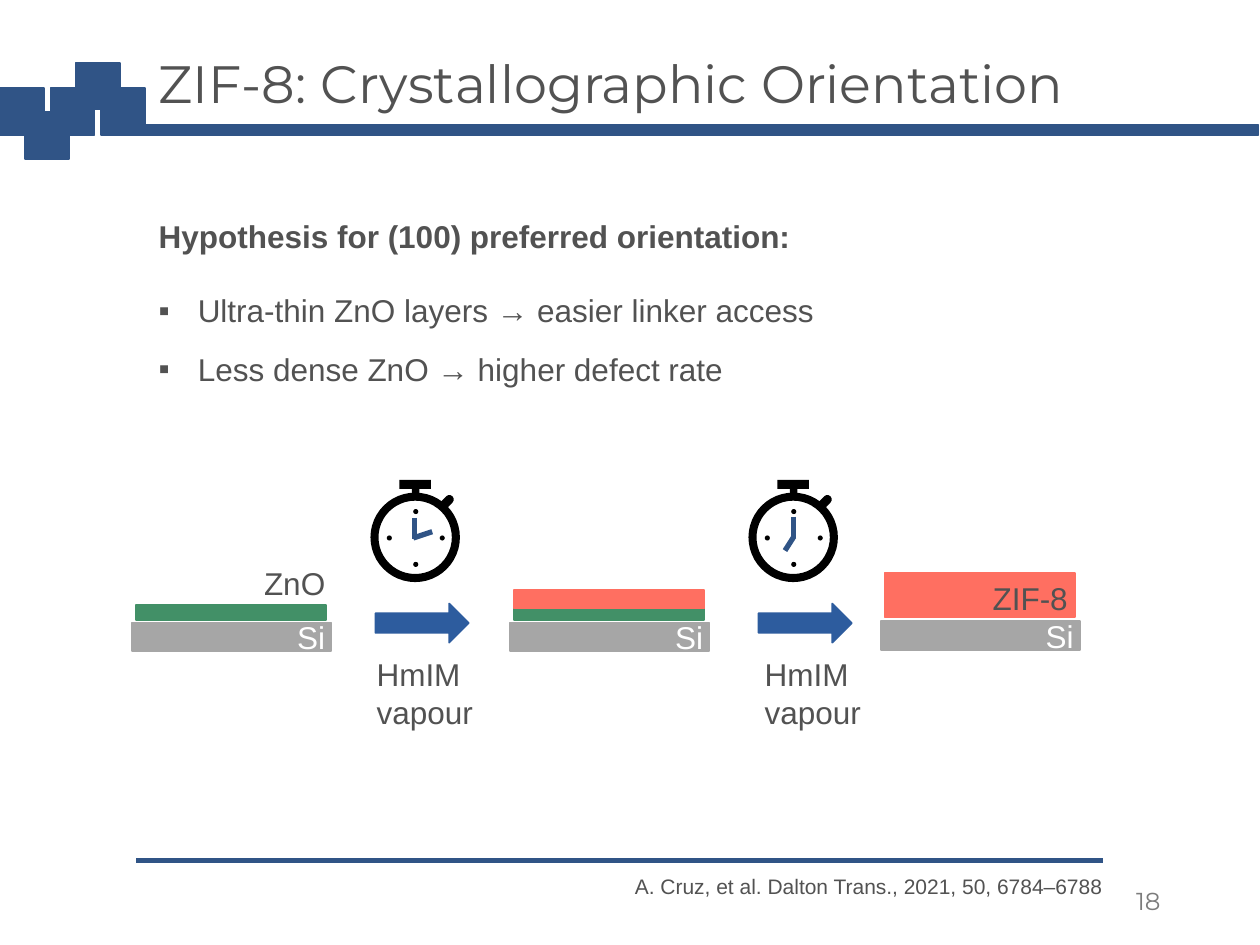
from lxml.etree import SubElement
from pptx import Presentation
from pptx.dml.color import RGBColor
from pptx.enum.shapes import MSO_CONNECTOR as Connector, MSO_SHAPE as Shape
from pptx.enum.text import MSO_ANCHOR as Anchor, MSO_AUTO_SIZE as AutoSize, PP_ALIGN as Align
from pptx.oxml.ns import qn
from pptx.util import Inches, Pt

NAVY = RGBColor(0x30, 0x54, 0x86)
ARROW_BLUE = RGBColor(0x2D, 0x5C, 0x9E)
SILICON_GREY = RGBColor(0xA6, 0xA6, 0xA6)
ZNO_GREEN = RGBColor(0x42, 0x90, 0x67)
ZIF_CORAL = RGBColor(0xFF, 0x6F, 0x61)
TEXT_GREY = RGBColor(0x52, 0x52, 0x52)
NUMBER_GREY = RGBColor(0x7C, 0x7C, 0x7C)
BLACK = RGBColor(0, 0, 0)
WHITE = RGBColor(0xFF, 0xFF, 0xFF)

TITLE_FONT = {"name": "Montserrat", "size": Pt(30), "color": TEXT_GREY}
NUMBER_FONT = {"name": "Montserrat", "size": Pt(14), "color": NUMBER_GREY}
BODY_FONT = {"name": "Arial", "size": Pt(18), "color": TEXT_GREY, "bold": False}
SILICON_FONT = {**BODY_FONT, "color": WHITE}
CITATION_FONT = {**BODY_FONT, "size": Pt(12)}
PLAIN = {"alignment": Align.LEFT, "space_before": Pt(0), "space_after": Pt(0), "line_spacing": 1.0}


def set_values(target, values):
    """Set every attribute of target named in values."""
    for name, value in values.items():
        if name == "color":
            target.color.rgb = value
        else:
            setattr(target, name, value)


def inches(*lengths):
    """Turn numbers into lengths in inches."""
    return [Inches(length) for length in lengths]


def place(shape, *box):
    """Move and size a shape to left, top, width and height."""
    set_values(shape, dict(zip(("left", "top", "width", "height"), inches(*box))))


def write(paragraph, text, font, **layout):
    """Write one formatted paragraph."""
    paragraph.text = text
    set_values(paragraph, {**PLAIN, **layout})
    set_values(paragraph.runs[0].font, font)


def add_label(slide, box, text, font, anchor=Anchor.TOP, **layout):
    """Add a wrapping text box."""
    frame = slide.shapes.add_textbox(*inches(*box)).text_frame
    set_values(frame, {"word_wrap": True, "vertical_anchor": anchor})
    write(frame.paragraphs[0], text, font, **layout)


def add_block(slide, kind, box, colour, outlined=True, rotation=0):
    """Add a flat shape in one colour."""
    shape = slide.shapes.add_shape(kind, *inches(*box))
    shape.shadow.inherit = False
    shape.rotation = rotation
    shape.fill.solid()
    shape.fill.fore_color.rgb = colour
    if outlined:
        set_values(shape.line, {"color": colour, "width": Pt(1)})
    else:
        shape.line.fill.background()
    return shape


def add_line(slide, start, end):
    """Add a thick navy line without shadow."""
    line = slide.shapes.add_connector(Connector.STRAIGHT, *inches(*start, *end))
    set_values(line.line, {"color": NAVY, "width": Pt(3)})
    SubElement(line._element.spPr, qn("a:effectLst"))


def add_frame(slide):
    """Add the header squares, header bar and footer rule."""
    add_line(slide, (1.08, 6.83), (8.75, 6.83))
    add_block(slide, Shape.RECTANGLE, (1.13, 0.99, 8.86, 0.08), NAVY)
    for column, top in enumerate((0.7, 0.89, 0.7, 0.5, 0.7)):
        add_block(slide, Shape.RECTANGLE, (0.2 * column, top, 0.35, 0.37), NAVY)


def fill_title(slide, text):
    """Place and format the title."""
    title = slide.shapes.title
    place(title, 1.16, 0.35, 8.62, 0.68)
    set_values(title.text_frame, {"vertical_anchor": Anchor.MIDDLE, "auto_size": AutoSize.NONE})
    write(title.text_frame.paragraphs[0], text, TITLE_FONT, line_spacing=0.9)


def set_bullet(paragraph, character):
    """Give a paragraph a hanging bullet, or none."""
    properties = paragraph._p.get_or_add_pPr()
    indent = Inches(0.31) if character else 0
    properties.set("marL", str(indent))
    properties.set("indent", str(-indent))
    if character:
        SubElement(properties, qn("a:buFont"), typeface="Arial")
        SubElement(properties, qn("a:buChar"), char=character)
    else:
        SubElement(properties, qn("a:buNone"))


def fill_body(slide, heading, points):
    """Write the heading and bullet points in the body placeholder."""
    body = slide.placeholders[1]
    place(body, 1.16, 1.67, 7, 1.48)
    frame = body.text_frame
    set_values(frame, {"auto_size": AutoSize.NONE, "vertical_anchor": Anchor.TOP})
    set_bullet(frame.paragraphs[0], None)
    write(frame.paragraphs[0], heading, {**BODY_FONT, "bold": True})
    for text, gap in points:
        paragraph = frame.add_paragraph()
        set_bullet(paragraph, "▪")
        write(paragraph, text, BODY_FONT, space_before=Pt(gap))


def add_sample(slide, left, top, films):
    """Add a silicon substrate carrying films of given top, height and colour."""
    add_block(slide, Shape.RECTANGLE, (left, top, 1.58, 0.23), SILICON_GREY)
    for film_top, height, colour in films:
        add_block(slide, Shape.RECTANGLE, (left + 0.03, film_top, 1.51, height), colour)
    add_label(slide, (left + 1.21, top - 0.08, 0.75, 0.4), "Si", SILICON_FONT)


def add_stopwatch(slide, x, y, hands):
    """Add a stopwatch centred on x, y with hands given as offsets."""
    add_block(slide, Shape.RECTANGLE, (x - 0.13, y - 0.46, 0.25, 0.07), BLACK, False)
    add_block(slide, Shape.RECTANGLE, (x - 0.03, y - 0.4, 0.06, 0.08), BLACK, False)
    knob = add_block(slide, Shape.ROUNDED_RECTANGLE, (x + 0.18, y - 0.32, 0.13, 0.07), BLACK, False, -45)
    knob.adjustments[0] = 0.5
    ring = add_block(slide, Shape.DONUT, (x - 0.36, y - 0.36, 0.71, 0.71), BLACK, False)
    ring.adjustments[0] = 0.09
    for across, down in ((0, -1), (0, 1), (1, 0), (-1, 0)):
        dot = (x + 0.21 * across - 0.02, y + 0.21 * down - 0.02, 0.04, 0.04)
        add_block(slide, Shape.OVAL, dot, BLACK, False)
    for start, end in hands:
        add_line(slide, (x + start[0], y + start[1]), (x + end[0], y + end[1]))


def add_exposure(slide, arrow_left, label_left):
    """Add a process arrow and the vapour below it."""
    add_block(slide, Shape.RIGHT_ARROW, (arrow_left, 4.79, 0.74, 0.31), ARROW_BLUE)
    add_label(slide, (label_left, 5.15, 1.09, 0.71), "HmIM vapour", BODY_FONT)


def main():
    """Build and save the slide."""
    presentation = Presentation()
    set_values(presentation, {"slide_width": Inches(10), "slide_height": Inches(7.5)})
    slide = presentation.slides.add_slide(presentation.slide_layouts[1])
    add_frame(slide)
    fill_title(slide, "ZIF-8: Crystallographic Orientation")
    fill_body(slide, "Hypothesis for (100) preferred orientation:", [
        ("Ultra-thin ZnO layers → easier linker access", 21),
        ("Less dense ZnO → higher defect rate", 12),
    ])

    add_sample(slide, 1.05, 4.94, [(4.8, 0.12, ZNO_GREEN)])
    add_sample(slide, 4.05, 4.94, [(4.83, 0.09, ZNO_GREEN), (4.68, 0.15, ZIF_CORAL)])
    add_sample(slide, 6.99, 4.93, [(4.55, 0.35, ZIF_CORAL)])
    add_label(slide, (1.46, 4.43, 1.22, 0.4), "ZnO", BODY_FONT, alignment=Align.RIGHT)
    add_label(slide, (7.78, 4.55, 0.87, 0.4), "ZIF-8", BODY_FONT)

    add_exposure(slide, 2.98, 2.89)
    add_exposure(slide, 6.02, 5.97)
    add_stopwatch(slide, 3.3, 4.27, [((-0.01, -0.16), (-0.01, 0.01)), ((0.13, -0.05), (-0.02, 0))])
    add_stopwatch(slide, 6.3, 4.27, [((0, -0.17), (0, 0)), ((-0.07, 0.1), (0, -0.01))])

    citation = "A. Cruz, et al. Dalton Trans., 2021, 50, 6784–6788"
    add_label(slide, (4.94, 6.88, 3.93, 0.3), citation, CITATION_FONT)
    add_label(slide, (7.06, 6.95, 2.25, 0.4), "18", NUMBER_FONT, Anchor.MIDDLE, alignment=Align.RIGHT)
    presentation.save("out.pptx")


if __name__ == "__main__":
    main()
